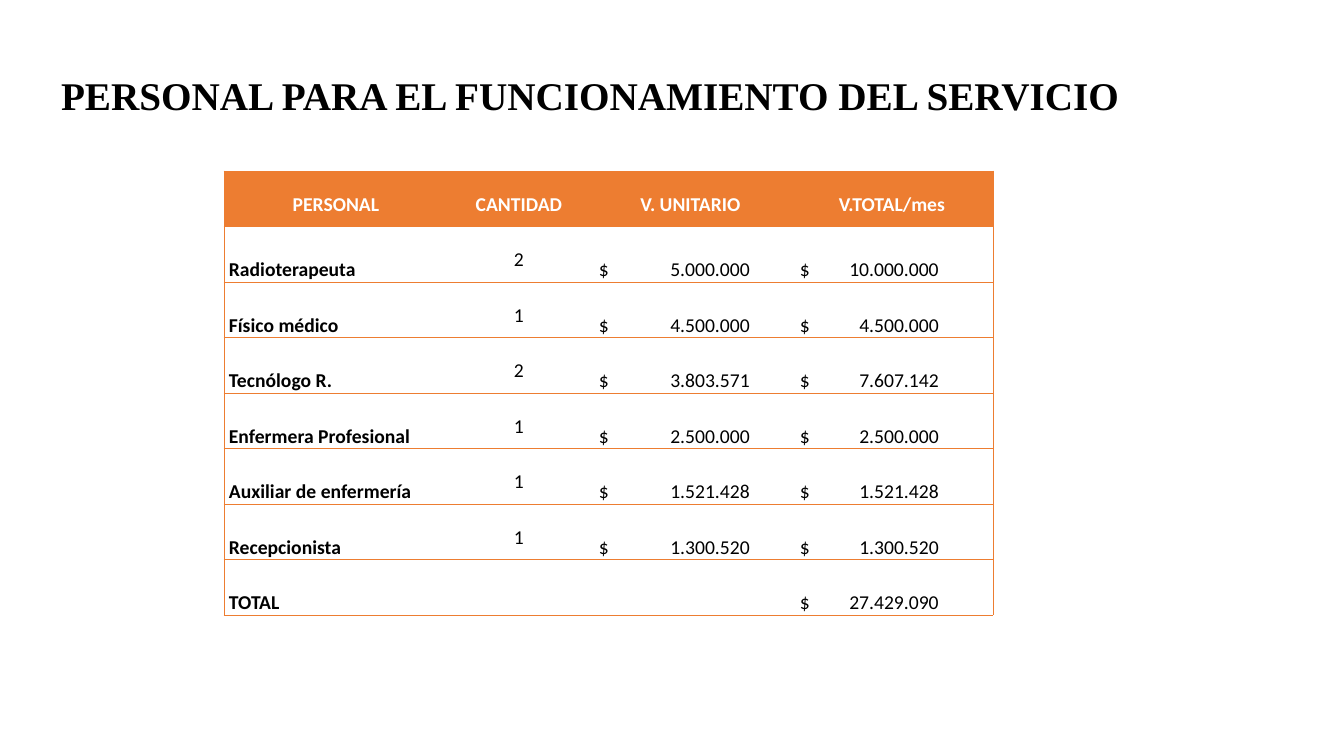
from lxml.etree import SubElement
from pptx import Presentation
from pptx.dml.color import RGBColor
from pptx.enum.text import MSO_ANCHOR, MSO_AUTO_SIZE, PP_ALIGN
from pptx.oxml.ns import qn
from pptx.util import Emu, Pt

TITLE = "PERSONAL PARA EL FUNCIONAMIENTO DEL SERVICIO"
HEADERS = ["PERSONAL", "CANTIDAD", "V. UNITARIO", "V.TOTAL/mes"]
STAFF = [
    ("Radioterapeuta", "2", "5.000.000", "10.000.000"),
    ("Físico médico", "1", "4.500.000", "4.500.000"),
    ("Tecnólogo R.", "2", "3.803.571", "7.607.142"),
    ("Enfermera Profesional", "1", "2.500.000", "2.500.000"),
    ("Auxiliar de enfermería", "1", "1.521.428", "1.521.428"),
    ("Recepcionista", "1", "1.300.520", "1.300.520"),
    ("TOTAL", "", "", "27.429.090"),
]
COLORS = {"accent": "ED7D31", "text": "000000", "header": "FFFFFF"}
NO_STYLE_NO_GRID = "{2D5ABB26-0587-4C30-8999-92F81FD0307C}"

TITLE_BOX = (51, 25, 1159, 146)
TABLE_BOX = (224, 171, 769, 444)
COLUMN_WIDTHS = [224, 142, 201, 202]
CELL_MARGIN, MONEY_MARGIN = 5, 9
AMOUNT_TABS = {2: 151, 3: 139}  # right edge of the amounts, by column


def px(value):
    return Emu(round(value * 914400 / 100.8))


def color(name):
    return RGBColor.from_string(COLORS[name])


def add_run(paragraph, text, font_name, size, color_name, bold):
    run = paragraph.add_run()
    run.text = text
    run.font.name = font_name
    run.font.size = Pt(size)
    run.font.bold = bold
    run.font.color.rgb = color(color_name)


def add_right_tab(paragraph, position):
    tabs = SubElement(paragraph._p.get_or_add_pPr(), qn("a:tabLst"))
    SubElement(tabs, qn("a:tab"), pos=str(px(position)), algn="r")


def add_borders(cell, sides):
    for side in sides:
        line = SubElement(cell._tc.get_or_add_tcPr(), qn(f"a:ln{side}"), w=str(Pt(0.5)))
        fill = SubElement(line, qn("a:solidFill"))
        SubElement(fill, qn("a:srgbClr"), val=COLORS["accent"])


def fill_cell(cell, row, column, text):
    is_header = row == 0
    is_money = not is_header and column in AMOUNT_TABS
    left = "L" if column == 0 else ""
    right = "R" if column == len(HEADERS) - 1 else ""
    add_borders(cell, left + right + "TB")
    if is_header:
        cell.fill.solid()
        cell.fill.fore_color.rgb = color("accent")
    else:
        cell.fill.background()

    cell.margin_left = px(MONEY_MARGIN if is_money else CELL_MARGIN)
    cell.margin_right = px(CELL_MARGIN)
    cell.margin_top = cell.margin_bottom = 0
    centred = is_header or column == 1
    cell.vertical_anchor = MSO_ANCHOR.MIDDLE if centred else MSO_ANCHOR.BOTTOM
    if not text:
        return
    paragraph = cell.text_frame.paragraphs[0]
    paragraph.alignment = PP_ALIGN.CENTER if centred else PP_ALIGN.JUSTIFY
    paragraph.line_spacing = 1.5
    if is_money:
        add_right_tab(paragraph, AMOUNT_TABS[column])
        text = f"$\t{text}"
    add_run(paragraph, text, "Calibri", 14,
            "header" if is_header else "text", is_header or column == 0)


def add_title(slide):
    title = slide.shapes.title
    title.left, title.top, title.width, title.height = map(px, TITLE_BOX)
    frame = title.text_frame
    frame.auto_size = MSO_AUTO_SIZE.NONE
    frame.vertical_anchor = MSO_ANCHOR.MIDDLE
    paragraph = frame.paragraphs[0]
    paragraph.alignment = PP_ALIGN.LEFT
    paragraph.line_spacing = 0.9
    add_run(paragraph, TITLE, "Times New Roman", 28, "text", True)


def add_staff_table(slide):
    rows = [HEADERS, *STAFF]
    table = slide.shapes.add_table(len(rows), len(HEADERS), *map(px, TABLE_BOX)).table
    table.horz_banding = False
    table._tbl.tblPr.find(qn("a:tableStyleId")).text = NO_STYLE_NO_GRID
    for column, width in zip(table.columns, COLUMN_WIDTHS):
        column.width = px(width)
    for row, texts in enumerate(rows):
        table.rows[row].height = px(TABLE_BOX[3] / len(rows))
        for column, text in enumerate(texts):
            fill_cell(table.cell(row, column), row, column, text)


def main():
    presentation = Presentation()
    presentation.slide_width, presentation.slide_height = px(1344), px(756)
    slide = presentation.slides.add_slide(presentation.slide_layouts[5])
    add_title(slide)
    add_staff_table(slide)
    presentation.save("out.pptx")


if __name__ == "__main__":
    main()
